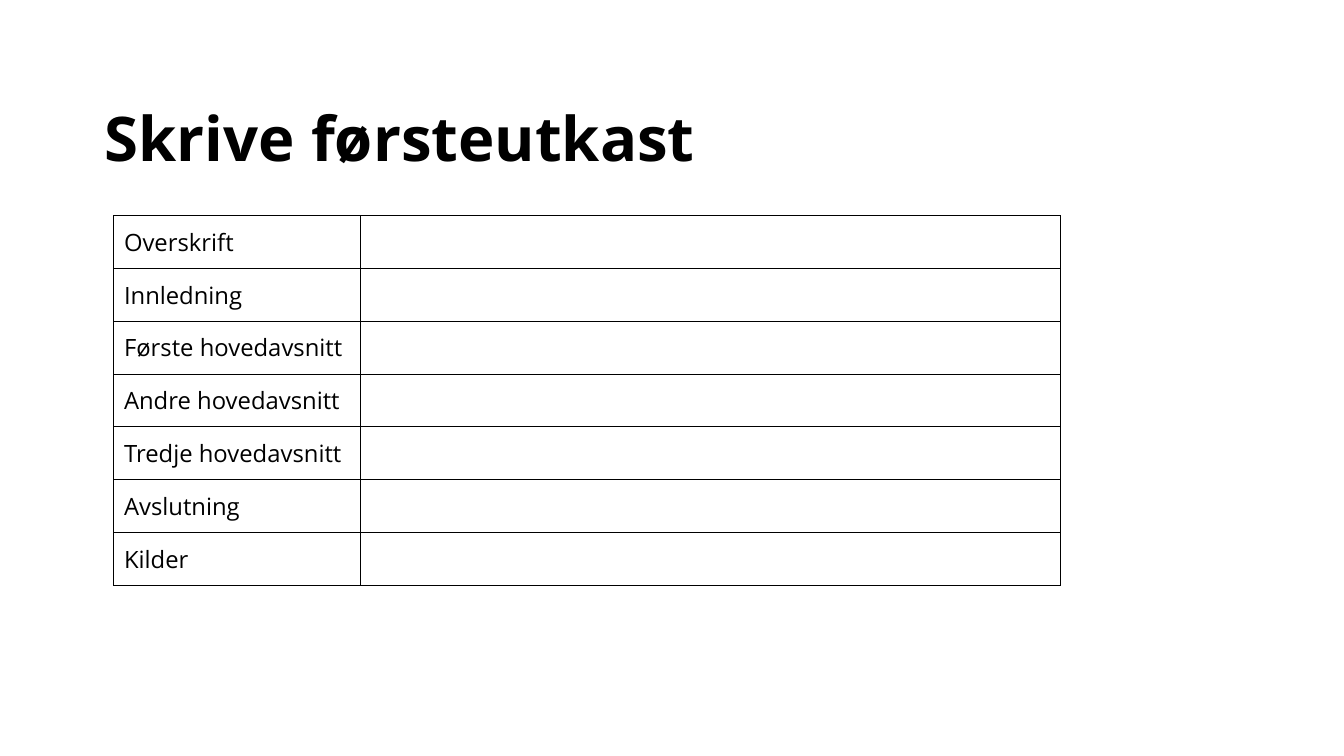
from lxml import etree
from pptx import Presentation
from pptx import util as u
from pptx.dml.color import RGBColor
from pptx.enum import text as t
from pptx.oxml import ns

BLACK = RGBColor(0x00, 0x00, 0x00)
WHITE = RGBColor(0xFF, 0xFF, 0xFF)
FONT = "Open Sans"
MARGIN = u.Inches(0.1)
ROW_HEIGHT = u.Inches(0.52)
COLUMN_WIDTHS = (u.Inches(2.45), u.Inches(6.94))
SECTIONS = (
    "Overskrift",
    "Innledning",
    "Første hovedavsnitt",
    "Andre hovedavsnitt",
    "Tredje hovedavsnitt",
    "Avslutning",
    "Kilder",
)


def write(frame, words, size, bold=False, spacing=None):
    frame.text = words
    paragraph = frame.paragraphs[0]
    paragraph.alignment = t.PP_ALIGN.LEFT
    paragraph.line_spacing = spacing
    for run in paragraph.runs:
        run.font.name = FONT
        run.font.size = u.Pt(size)
        run.font.bold = bold
        run.font.color.rgb = BLACK


def outline(cell, points):
    properties = cell._tc.get_or_add_tcPr()
    for position, side in enumerate(("lnL", "lnR", "lnT", "lnB")):
        border = etree.Element(ns.qn(f"a:{side}"), w=str(u.Pt(points)))
        fill = etree.SubElement(border, ns.qn("a:solidFill"))
        etree.SubElement(fill, ns.qn("a:srgbClr"), val=str(BLACK))
        properties.insert(position, border)


deck = Presentation()
deck.slide_width, deck.slide_height = u.Inches(13.33), u.Inches(7.5)
slide = deck.slides.add_slide(deck.slide_layouts[5])
slide.background.fill.solid()
slide.background.fill.fore_color.rgb = WHITE

heading = slide.shapes.title
heading.left, heading.top = u.Inches(0.94), u.Inches(0.97)
heading.width, heading.height = u.Inches(10.52), u.Inches(0.63)
heading_text = heading.text_frame
heading_text.word_wrap = True
heading_text.auto_size = t.MSO_AUTO_SIZE.NONE
heading_text.vertical_anchor = t.MSO_ANCHOR.TOP
heading_text.margin_left = heading_text.margin_right = MARGIN
heading_text.margin_top = heading_text.margin_bottom = MARGIN
write(heading_text, "Skrive førsteutkast", size=44, bold=True, spacing=0.9)

draft = slide.shapes.add_table(
    len(SECTIONS), len(COLUMN_WIDTHS), u.Inches(1.13), u.Inches(2.14),
    sum(COLUMN_WIDTHS), ROW_HEIGHT * len(SECTIONS),
).table
draft.first_row = draft.horz_banding = False
for column, width in zip(draft.columns, COLUMN_WIDTHS):
    column.width = width
for row, section in zip(draft.rows, SECTIONS):
    row.height = ROW_HEIGHT
    for cell in row.cells:
        cell.margin_left = cell.margin_right = MARGIN
        cell.margin_top = cell.margin_bottom = MARGIN
        cell.fill.background()
        outline(cell, points=0.75)
    write(row.cells[0].text_frame, section, size=17)

deck.save("out.pptx")
